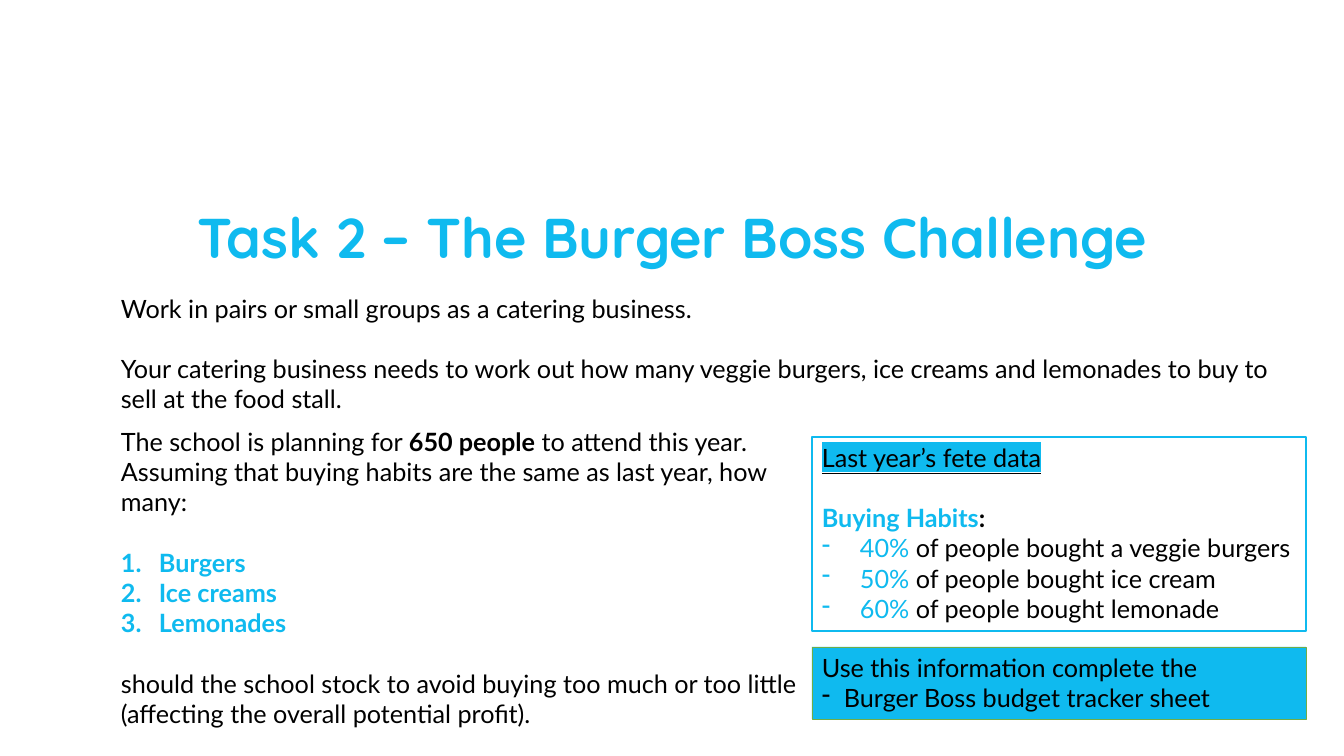
"""Build the Burger Boss Challenge task slide."""
import pptx
import pptx.util
import pptx.dml.color
import pptx.enum.shapes
import pptx.enum.text
import pptx.oxml
import pptx.oxml.ns
from lxml import etree
from dataclasses import dataclass

PX = 914400 / 100.8


@dataclass(frozen=True)
class Theme:
    blue: str = "0FBAEF"
    black: str = "000000"
    green: str = "70AD47"
    heading_font: str = "Quicksand"
    body_font: str = "Lato"
    heading_size: int = 40
    body_size: int = 18
    blank_line: float = 21.6


theme = Theme()
rgb = pptx.dml.color.RGBColor.from_string
qn = pptx.oxml.ns.qn


def px(*lengths):
    return [round(length * PX) for length in lengths]


def write(frame, paragraphs, font=theme.body_font, size=theme.body_size,
          align=pptx.enum.text.PP_ALIGN.LEFT, anchor=pptx.enum.text.MSO_ANCHOR.TOP,
          line_spacing=None):
    """Fill a frame with (runs, options) pairs; each run is (text, options)."""
    frame.word_wrap = True
    frame.vertical_anchor = anchor
    for number, (runs, layout) in enumerate(paragraphs):
        paragraph = frame.add_paragraph() if number else frame.paragraphs[0]
        if "bullet" in layout:
            properties = paragraph._p.get_or_add_pPr()
            [indent] = px(layout["indent"])
            properties.set("marL", str(indent))
            properties.set("indent", str(-indent))
            tag, key, value = layout["bullet"]
            etree.SubElement(properties, qn(tag)).set(key, value)
        paragraph.alignment = align
        if line_spacing:
            paragraph.line_spacing = line_spacing
        if layout.get("gap"):
            paragraph.space_before = pptx.util.Pt(theme.blank_line)
        for text, style in runs:
            run = paragraph.add_run()
            run.text = text
            run.font.name = font
            run.font.size = pptx.util.Pt(size)
            run.font.bold = style.get("bold", False)
            run.font.underline = style.get("underline", False)
            run.font.color.rgb = rgb(style.get("color", theme.black))
            if "highlight" in style:
                highlight = etree.Element(qn("a:highlight"))
                etree.SubElement(highlight, qn("a:srgbClr")).set("val", style["highlight"])
                run._r.rPr.find(qn("a:solidFill")).addnext(highlight)


presentation = pptx.Presentation()
presentation.slide_width, presentation.slide_height = px(1344, 756)
slide = presentation.slides.add_slide(presentation.slide_layouts[6])

blue = {"color": theme.blue}
blue_bold = {"color": theme.blue, "bold": True}
gap = {"gap": True}
numbered = {"bullet": ("a:buAutoNum", "type", "arabicPeriod"), "indent": 38}
dashed = {"bullet": ("a:buChar", "char", "-"), "indent": 38}

heading = slide.shapes.add_textbox(*px(93, 207, 1159, 66))
write(heading.text_frame, [([("Task 2 – The Burger Boss Challenge", blue_bold)], {})],
      font=theme.heading_font, size=theme.heading_size, line_spacing=0.9,
      align=pptx.enum.text.PP_ALIGN.CENTER, anchor=pptx.enum.text.MSO_ANCHOR.MIDDLE)

introduction = slide.shapes.add_textbox(*px(111, 288, 1195, 132))
write(introduction.text_frame, [
    ([("Work in pairs or small groups as a catering business.", {})], {}),
    ([("Your catering business needs to work out how many veggie burgers, ice creams "
       "and lemonades to buy to sell at the food stall.", {})], gap),
])

question = slide.shapes.add_textbox(*px(111, 421, 702, 316))
write(question.text_frame, [
    ([("The school is planning for ", {}), ("650 people", {"bold": True}),
      (" to attend this year. Assuming that buying habits are the same as last year, "
       "how many:", {})], {}),
    *[([(product, blue_bold)], {**numbered, "gap": product == "Burgers"})
      for product in ("Burgers", "Ice creams", "Lemonades")],
    ([("should the school stock to avoid buying too much or too little "
       "(affecting the overall potential profit).", {})], gap),
])

habits = [("40% ", "of people bought a veggie burgers"),
          ("50% ", "of people bought ice cream"),
          ("60% ", "of people bought lemonade")]
fete_data = [
    ([("Last year’s fete data", {"underline": True, "highlight": theme.blue})], {}),
    ([("Buying Habits", blue_bold), (":", {"bold": True})], gap),
    *[([(share, blue), (habit, {})], dashed) for share, habit in habits],
]
instruction = [
    ([("Use this information complete the", {})], {}),
    ([("Burger Boss budget tracker sheet", {})], {**dashed, "indent": 22}),
]
panels = [(437, 194, None, theme.blue, 1, fete_data),
          (647, 72, theme.blue, theme.green, 0.5, instruction)]
for top, height, fill, outline, weight, paragraphs in panels:
    panel = slide.shapes.add_shape(pptx.enum.shapes.MSO_SHAPE.RECTANGLE,
                                   *px(812, top, 494, height))
    panel.shadow.inherit = False
    if fill:
        panel.fill.solid()
        panel.fill.fore_color.rgb = rgb(fill)
    else:
        panel.fill.background()
    panel.line.color.rgb = rgb(outline)
    panel.line.width = pptx.util.Pt(weight)
    write(panel.text_frame, paragraphs)

presentation.save("out.pptx")
